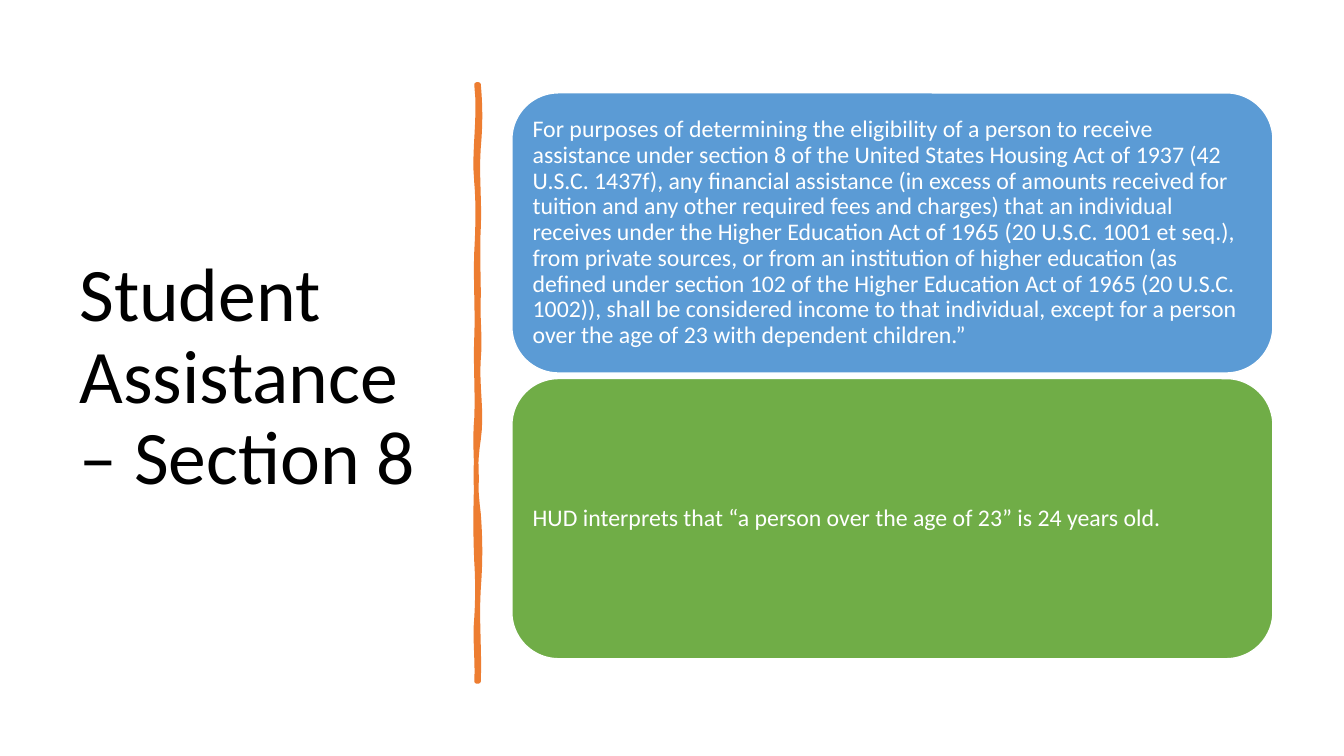
from pptx import Presentation
from pptx import util as u
from pptx.dml.color import RGBColor
from pptx.enum import shapes, text

BLACK = RGBColor(0x00, 0x00, 0x00)
WHITE = RGBColor(0xFF, 0xFF, 0xFF)
ORANGE = RGBColor(0xED, 0x7D, 0x31)
BLUE = RGBColor(0x5B, 0x9B, 0xD5)
GREEN = RGBColor(0x70, 0xAD, 0x47)

TITLE = "Student Assistance – Section 8"
STATUTE = (
    "For purposes of determining the eligibility of a person to receive "
    "assistance under section 8 of the United States Housing Act of 1937 "
    "(42 U.S.C. 1437f), any financial assistance (in excess of amounts "
    "received for tuition and any other required fees and charges) that an "
    "individual receives under the Higher Education Act of 1965 (20 U.S.C. "
    "1001 et seq.), from private sources, or from an institution of higher "
    "education (as defined under section 102 of the Higher Education Act of "
    "1965 (20 U.S.C. 1002)), shall be considered income to that individual, "
    "except for a person over the age of 23 with dependent children.”"
)
INTERPRETATION = (
    "HUD interprets that “a person over the age of 23” is 24 years old."
)

# Divider edges in cm: knot heights, and the sideways pull at both ends of each span
RIGHT_X, LEFT_X = 12.06, 12.01
RIGHT_KNOTS = [2.13, 3.71, 5.74, 7.47, 9.04, 11.07, 12.95, 14.83, 17.17]
RIGHT_PULLS = [(0.05, 0.05), (-0.05, 0.03), (-0.03, 0), (-0.03, 0.05),
               (-0.05, 0.1), (-0.1, -0.08), (0.05, 0.05), (-0.05, 0.03)]
LEFT_KNOTS = [17.17, 15.57, 14.15, 12.12, 10.54, 8.51, 6.35, 4.6, 2.13]
LEFT_PULLS = [(0.03, -0.05), (0.03, 0.03), (-0.03, -0.03), (0, -0.05),
              (0.03, -0.03), (0.03, -0.03), (0.03, 0.05), (-0.08, 0.1)]


def write(frame, words, size, color, inset=None):
    """Fill a text frame with one left-aligned, vertically centred paragraph."""
    frame.word_wrap = True
    frame.vertical_anchor = text.MSO_ANCHOR.MIDDLE
    if inset is not None:
        frame.margin_left = frame.margin_right = u.Cm(inset)
        frame.margin_top = frame.margin_bottom = u.Cm(inset)
    paragraph = frame.paragraphs[0]
    paragraph.alignment = text.PP_ALIGN.LEFT
    paragraph.line_spacing = 0.9
    run = paragraph.add_run()
    run.text = words
    run.font.name = "Calibri"
    run.font.size = u.Pt(size)
    run.font.color.rgb = color


def wavy_edge(x, knots, pulls, steps=8):
    """Points in cm along a nearly vertical edge of cubic spans."""
    points = [(x, knots[0])]
    for top, bottom, (first, second) in zip(knots, knots[1:], pulls):
        for step in range(1, steps + 1):
            t = step / steps
            sway = 3 * t * (1 - t) * ((1 - t) * first + t * second)
            points.append((x + sway, top + t * (bottom - top)))
    return points


class SlideBuilder:
    def __init__(self, deck):
        self.slide = deck.slides.add_slide(deck.slide_layouts[6])

    def paint(self, shape, fill, line, width):
        shape.shadow.inherit = False
        shape.fill.solid()
        shape.fill.fore_color.rgb = fill
        shape.line.color.rgb = line
        shape.line.width = u.Pt(width)

    def title(self, words, left, top, width, height):
        box = self.slide.shapes.add_textbox(
            u.Cm(left), u.Cm(top), u.Cm(width), u.Cm(height))
        write(box.text_frame, words, size=54, color=BLACK)

    def card(self, words, fill, left, top, width, height):
        card = self.slide.shapes.add_shape(
            shapes.MSO_SHAPE.ROUNDED_RECTANGLE,
            u.Cm(left), u.Cm(top), u.Cm(width), u.Cm(height))
        self.paint(card, fill, line=WHITE, width=1)
        write(card.text_frame, words, size=17, color=WHITE, inset=0.18)

    def divider(self, color):
        outline = (wavy_edge(RIGHT_X, RIGHT_KNOTS, RIGHT_PULLS)
                   + wavy_edge(LEFT_X, LEFT_KNOTS, LEFT_PULLS))
        points = [(u.Cm(x), u.Cm(y)) for x, y in outline]
        builder = self.slide.shapes.build_freeform(*points[0])
        builder.add_line_segments(points[1:], close=True)
        self.paint(builder.convert_to_shape(), color, line=color, width=3.25)


def main():
    deck = Presentation()
    deck.slide_width, deck.slide_height = u.Cm(33.87), u.Cm(19.05)
    builder = SlideBuilder(deck)
    builder.title(TITLE, left=1.75, top=1.78, width=9.5, height=15.52)
    builder.divider(ORANGE)
    cards = [(STATUTE, BLUE), (INTERPRETATION, GREEN)]
    for row, (words, fill) in enumerate(cards):
        builder.card(words, fill, left=12.9, top=2.34 + row * 7.2,
                     width=19.18, height=7.06)
    deck.save("out.pptx")


if __name__ == "__main__":
    main()
